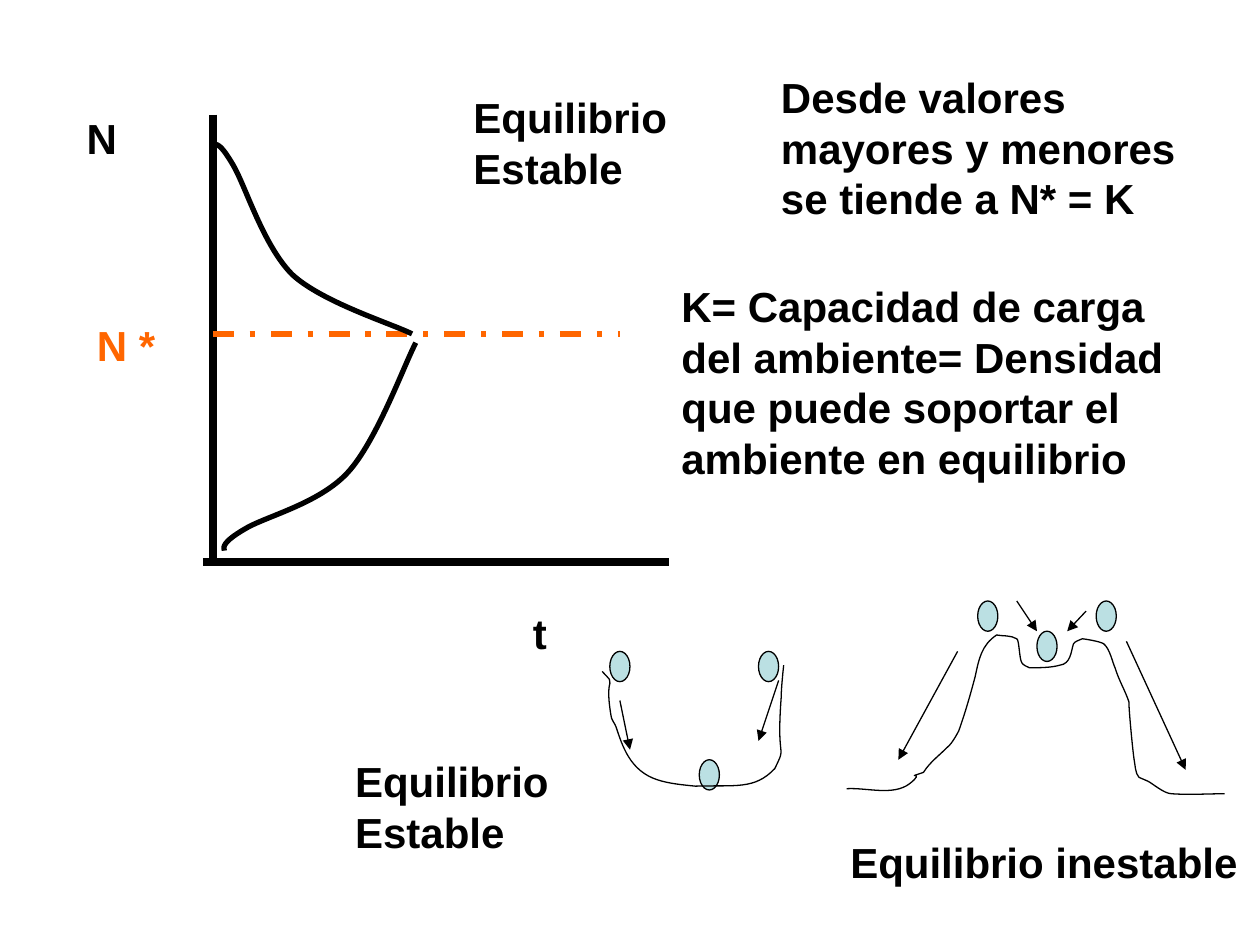
from dataclasses import dataclass

from lxml import etree
from pptx import Presentation
from pptx.dml.color import RGBColor
from pptx.enum.dml import MSO_LINE
from pptx.enum.shapes import MSO_CONNECTOR, MSO_SHAPE
from pptx.enum.text import MSO_ANCHOR, MSO_AUTO_SIZE, PP_ALIGN
from pptx.oxml.ns import qn
from pptx.util import Pt

PX = 9144  # one px is a hundredth of an inch
STRAIGHT = MSO_CONNECTOR.STRAIGHT
OVAL, RECTANGLE = MSO_SHAPE.OVAL, MSO_SHAPE.RECTANGLE
DASH_DOT = MSO_LINE.DASH_DOT
TOP, LEFT = MSO_ANCHOR.TOP, PP_ALIGN.LEFT
GROW = MSO_AUTO_SIZE.SHAPE_TO_FIT_TEXT


@dataclass(frozen=True)
class Theme:
    ink: RGBColor = RGBColor(0x00, 0x00, 0x00)
    paper: RGBColor = RGBColor(0xFF, 0xFF, 0xFF)
    accent: RGBColor = RGBColor(0xFF, 0x66, 0x00)
    ball: RGBColor = RGBColor(0xBB, 0xE0, 0xE3)
    font: str = "Arial"
    text_size: float = 24
    axis_width: float = 4.5
    curve_width: float = 3
    thin_width: float = 0.75


THEME = Theme()


def set_text(shape, text, color=THEME.ink):
    text_frame = shape.text_frame
    text_frame.word_wrap = True
    text_frame.auto_size = GROW
    text_frame.vertical_anchor = TOP
    text_frame.text = text
    paragraph = text_frame.paragraphs[0]
    paragraph.alignment = LEFT
    font = paragraph.runs[0].font
    font.name, font.size, font.bold = THEME.font, Pt(THEME.text_size), True
    font.color.rgb = color


def add_label(slide, text, box, color=THEME.ink):
    set_text(slide.shapes.add_textbox(*(n * PX for n in box)), text, color)


def add_caption(slide, text, box):
    shape = slide.shapes.add_shape(RECTANGLE, *(n * PX for n in box))
    shape.shadow.inherit = False
    shape.fill.solid()
    shape.fill.fore_color.rgb = THEME.paper
    shape.line.fill.background()
    set_text(shape, text)


def add_line(slide, box, ends, width, color=THEME.ink, dash=None, arrow=False):
    left, top = box
    x1, y1, x2, y2 = ends
    connector = slide.shapes.add_connector(
        STRAIGHT, (left + x1) * PX, (top + y1) * PX, (left + x2) * PX, (top + y2) * PX)
    connector.line.color.rgb = color
    connector.line.width = Pt(width)
    if dash is not None:
        connector.line.dash_style = dash
    if arrow:
        line = connector.line._get_or_add_ln()
        etree.SubElement(line, qn("a:tailEnd"), type="triangle")
    etree.SubElement(connector._element.spPr, qn("a:effectLst"))


def add_curve(slide, box, start, segments, width):
    """Cubic curve; each segment is (x1, y1, x2, y2, end x, end y)."""
    left, top = box

    def place(x, y):
        return (left + x) * PX, (top + y) * PX

    builder = slide.shapes.build_freeform(*place(*start))
    builder.add_line_segments([place(*segment[4:]) for segment in segments], close=False)
    shape = builder.convert_to_shape()
    shape.shadow.inherit = False
    shape.fill.background()
    shape.line.color.rgb = THEME.ink
    shape.line.width = Pt(width)
    # Turn each straight segment into a cubic one by adding its control points
    straight_segments = list(shape._element.spPr.iter(qn("a:lnTo")))
    for element, segment in zip(straight_segments, segments):
        element.tag = qn("a:cubicBezTo")
        for index in (0, 1):
            x, y = place(*segment[2 * index:2 * index + 2])
            point = etree.Element(qn("a:pt"), x=str(x - shape.left), y=str(y - shape.top))
            element.insert(index, point)


def add_balls(slide, box, positions):
    left, top = box
    for x, y in positions:
        ball = slide.shapes.add_shape(
            OVAL, (left + x) * PX, (top + y) * PX, 16 * PX, 24 * PX)
        ball.shadow.inherit = False
        ball.fill.solid()
        ball.fill.fore_color.rgb = THEME.ball
        ball.line.color.rgb = THEME.ink
        ball.line.width = Pt(THEME.thin_width)


def add_arrows(slide, box, arrows):
    for ends in arrows:
        add_line(slide, box, ends, THEME.thin_width, arrow=True)


def add_density_graph(slide, box):
    left, top = box
    # Axes and equilibrium level
    add_line(slide, box, (110, 7, 110, 362), THEME.axis_width)
    add_line(slide, box, (102, 362, 472, 362), THEME.axis_width)
    add_line(slide, box, (110, 181, 433, 181), THEME.curve_width, THEME.accent, DASH_DOT)
    # Axis labels
    add_label(slide, "N", (left, top, 87, 50))
    add_label(slide, "t", (left + 354, top + 393, 102, 50))
    add_label(slide, "N *", (left + 8, top + 165, 95, 50), THEME.accent)
    # Falling and rising populations
    add_curve(slide, box, (110, 31), [
        (113, 30, 116, 30, 126, 47), (136, 64, 150, 111, 173, 134),
        (197, 156, 252, 173, 268, 181)], THEME.curve_width)
    add_curve(slide, box, (119, 353), [
        (118, 350, 118, 346, 135, 336), (151, 326, 194, 316, 217, 291),
        (240, 266, 262, 205, 271, 188)], THEME.curve_width)


def add_stable_valley(slide, box):
    left, top = box
    add_caption(slide, "Equilibrio Estable", (left - 206, top + 78, 197, 90))
    add_balls(slide, box, [(77, 86), (6, 0), (124, 0)])
    add_arrows(slide, box, [(14, 39, 22, 78), (140, 23, 124, 71)])
    add_curve(slide, box, (0, 16), [
        (13, 30, 1, 15, 7, 51), (7, 54, 10, 57, 11, 60),
        (16, 75, 22, 95, 44, 102), (53, 105, 64, 106, 74, 107),
        (106, 106, 121, 110, 137, 93), (147, 72, 138, 91, 142, 37),
        (142, 29, 144, 11, 144, 11)], THEME.thin_width)


def add_unstable_hill(slide, box):
    left, top = box
    add_curve(slide, box, (0, 149), [
        # Left slope
        (16, 148, 37, 155, 50, 145), (64, 134, 44, 142, 61, 136),
        (66, 128, 73, 123, 80, 116), (84, 113, 89, 103, 89, 103),
        (94, 89, 98, 75, 102, 60), (105, 46, 107, 35, 119, 27),
        # Hollow at the top
        (124, 28, 130, 27, 135, 30), (137, 31, 137, 46, 139, 49),
        (140, 51, 143, 52, 145, 53), (153, 53, 162, 53, 169, 51),
        (178, 50, 178, 40, 180, 34), (181, 32, 185, 31, 187, 30),
        # Right slope
        (188, 30, 201, 32, 204, 34), (209, 38, 211, 49, 213, 53),
        (216, 63, 221, 71, 224, 80), (224, 87, 227, 118, 228, 125),
        (229, 130, 229, 137, 232, 140), (234, 142, 237, 141, 239, 143),
        (243, 145, 252, 153, 258, 153), (272, 154, 286, 153, 300, 153)], THEME.thin_width)
    add_balls(slide, box, [(151, 24), (104, 0), (198, 0)])
    add_arrows(slide, box, [(88, 40, 41, 126), (222, 32, 269, 134),
                            (135, 0, 151, 24), (190, 8, 175, 24)])
    add_caption(slide, "Equilibrio inestable", (left - 7, top + 182, 331, 50))


def add_explanation(slide, box):
    left, top = box
    add_caption(slide, "Desde valores mayores y menores se tiende a N* = K",
                (left + 244, top, 347, 130))
    add_label(slide, "K= Capacidad de carga del ambiente= Densidad que puede "
              "soportar el ambiente en equilibrio", (left + 165, top + 166, 417, 170))
    add_caption(slide, "Equilibrio Estable", (left, top + 16, 197, 90))


def main():
    presentation = Presentation()
    presentation.slide_width, presentation.slide_height = 1000 * PX, 750 * PX
    slide = presentation.slides.add_slide(presentation.slide_layouts[6])
    add_density_graph(slide, (59, 84))
    add_stable_valley(slide, (478, 517))
    add_unstable_hill(slide, (672, 477))
    add_explanation(slide, (366, 52))
    presentation.save("out.pptx")


if __name__ == "__main__":
    main()
